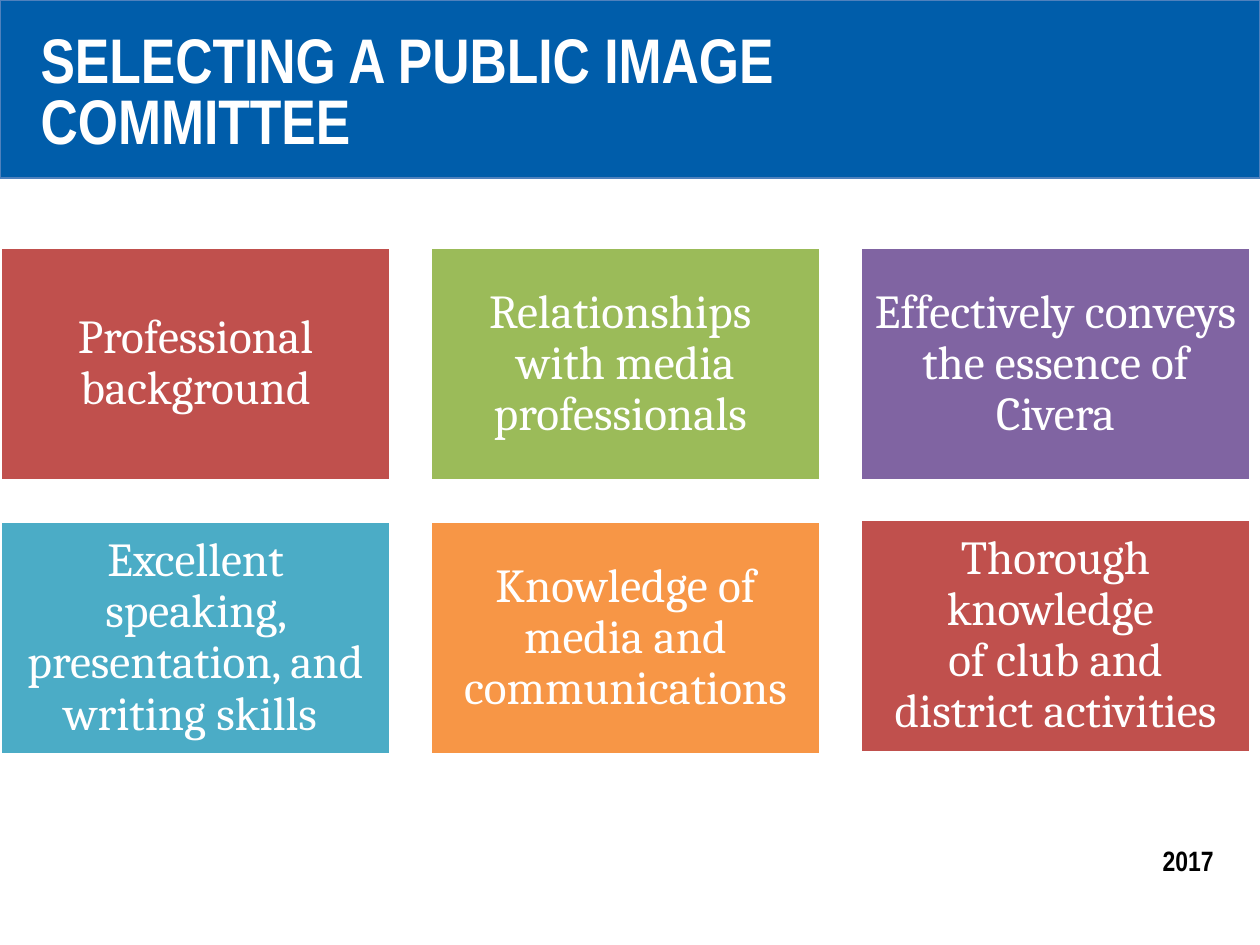
"""Build the slide on selecting a public image committee."""
from dataclasses import dataclass

from pptx import Presentation
from pptx.dml.color import RGBColor
from pptx.enum.shapes import MSO_SHAPE
from pptx.enum.text import MSO_ANCHOR, MSO_AUTO_SIZE, PP_ALIGN
from pptx.util import Inches, Pt

RECTANGLE = MSO_SHAPE.RECTANGLE
TOP, MIDDLE = MSO_ANCHOR.TOP, MSO_ANCHOR.MIDDLE
LEFT, CENTER, RIGHT = PP_ALIGN.LEFT, PP_ALIGN.CENTER, PP_ALIGN.RIGHT
NO_AUTO_SIZE = MSO_AUTO_SIZE.NONE
SCALE = Inches(1) / 126


@dataclass(frozen=True)
class Theme:
    band: str = "005DAA"
    band_line: str = "4F81BD"
    red: str = "C0504D"
    green: str = "9BBB59"
    purple: str = "8064A2"
    teal: str = "4BACC6"
    orange: str = "F79646"
    white: str = "FFFFFF"
    black: str = "000000"
    heading_font: str = "Arial Narrow"
    card_font: str = "Cambria"
    title_size: int = 36
    card_size: int = 27
    year_size: int = 16


THEME = Theme()


def add_box(shapes, bounds, fill, line, line_width):
    shape = shapes.add_shape(RECTANGLE, *(round(value * SCALE) for value in bounds))
    shape.shadow.inherit = False
    shape.fill.solid()
    shape.fill.fore_color.rgb = RGBColor.from_string(fill)
    shape.line.color.rgb = RGBColor.from_string(line)
    shape.line.width = Pt(line_width)
    return shape


def write_text(shape, text, *, font, size, color, bold=False, align=LEFT,
               anchor=TOP, spacing=1.0, margin=None):
    frame = shape.text_frame
    frame.word_wrap = True
    frame.auto_size = NO_AUTO_SIZE
    frame.vertical_anchor = anchor
    if margin is not None:
        frame.margin_left = frame.margin_right = round(margin * SCALE)
        frame.margin_top = frame.margin_bottom = round(margin * SCALE)
    paragraph = frame.paragraphs[0]
    paragraph.text = text
    paragraph.alignment = align
    paragraph.line_spacing = spacing
    for run in paragraph.runs:
        run.font.name = font
        run.font.size = Pt(size)
        run.font.bold = bold
        run.font.color.rgb = RGBColor.from_string(color)


presentation = Presentation()
presentation.slide_width = Inches(10)
presentation.slide_height = Inches(7.5)
slide = presentation.slides.add_slide(presentation.slide_layouts[5])

band = add_box(slide.shapes, (0, 0, 1260, 178), THEME.band, THEME.band_line, 0.75)
title = slide.shapes.title
title.element.addprevious(band.element)
title.left, title.top, title.width, title.height = (
    round(value * SCALE) for value in (28, 29, 980, 127))
write_text(title, "SELECTING A PUBLIC IMAGE COMMITTEE", font=THEME.heading_font,
           size=THEME.title_size, color=THEME.white, bold=True, spacing=0.8)

CARD_WIDTH, CARD_HEIGHT, COLUMN_PITCH = 391, 234, 430
cards = [
    ("Professional background", THEME.red, 247),
    ("Relationships \vwith media professionals ", THEME.green, 247),
    ("Effectively conveys the essence of Civera", THEME.purple, 247),
    ("Excellent speaking, presentation, and writing skills ", THEME.teal, 521),
    ("Knowledge of media and communications", THEME.orange, 521),
    ("Thorough knowledge \vof club and district activities", THEME.red, 519),
]
for index, (text, fill, top) in enumerate(cards):
    left = index % 3 * COLUMN_PITCH
    card = add_box(slide.shapes, (left, top, CARD_WIDTH, CARD_HEIGHT),
                   fill, THEME.white, 2)
    write_text(card, text, font=THEME.card_font, size=THEME.card_size,
               color=THEME.white, align=CENTER, anchor=MIDDLE, spacing=0.9, margin=14)

year = slide.shapes.add_textbox(
    *(round(value * SCALE) for value in (1045, 837, 181, 47)))
write_text(year, "2017", font=THEME.heading_font, size=THEME.year_size,
           color=THEME.black, bold=True, align=RIGHT)

presentation.save("out.pptx")
